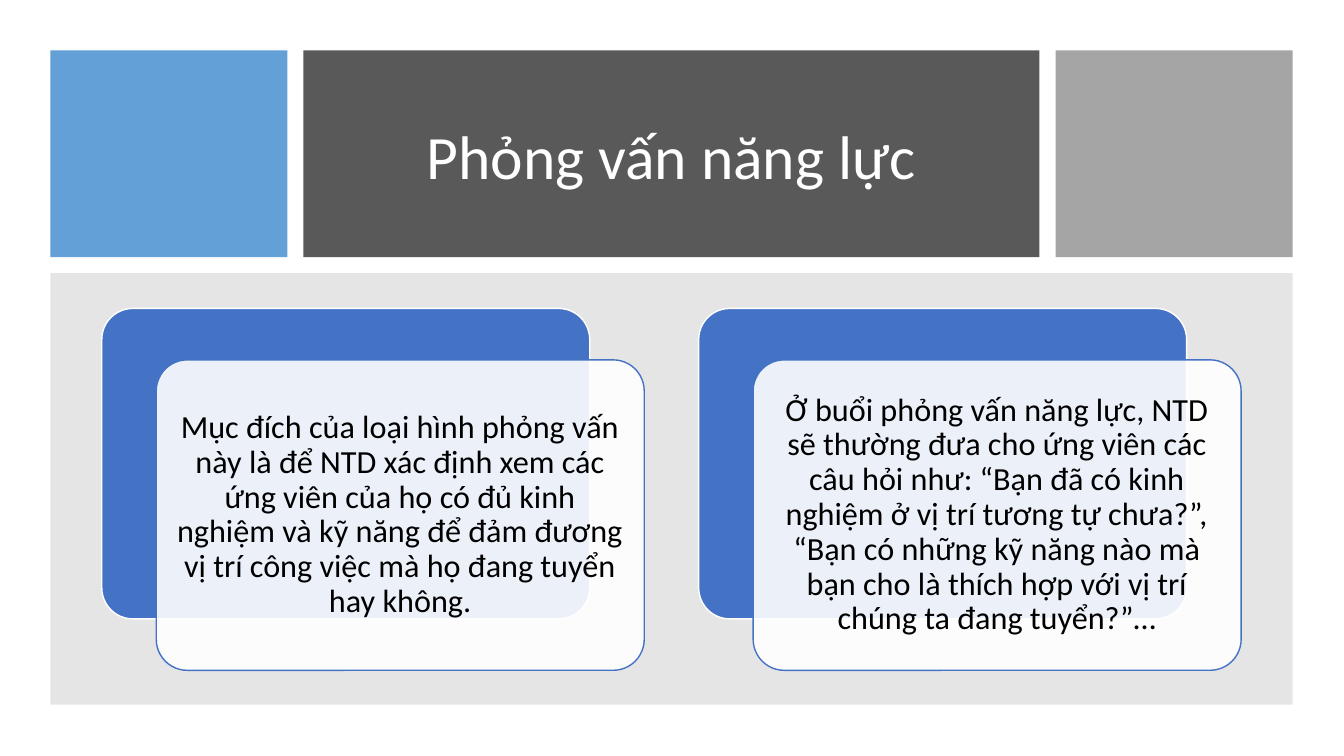
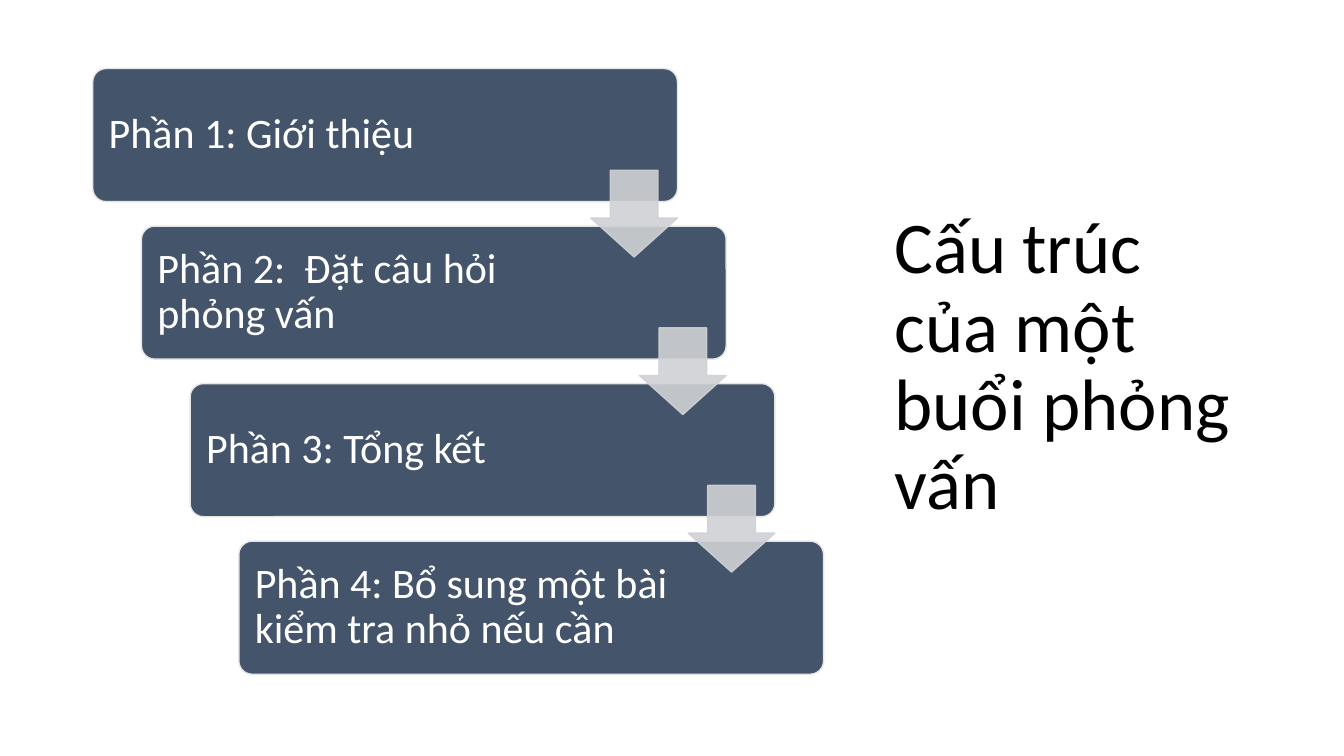
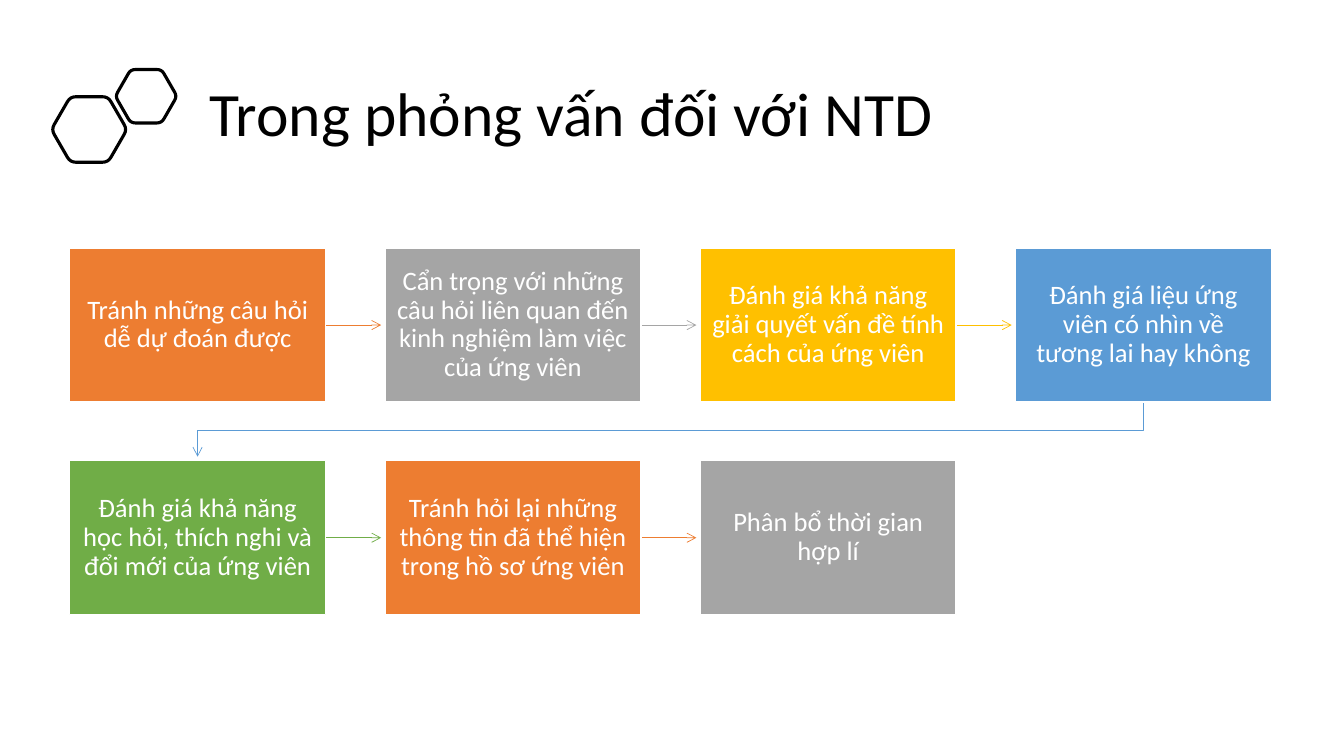
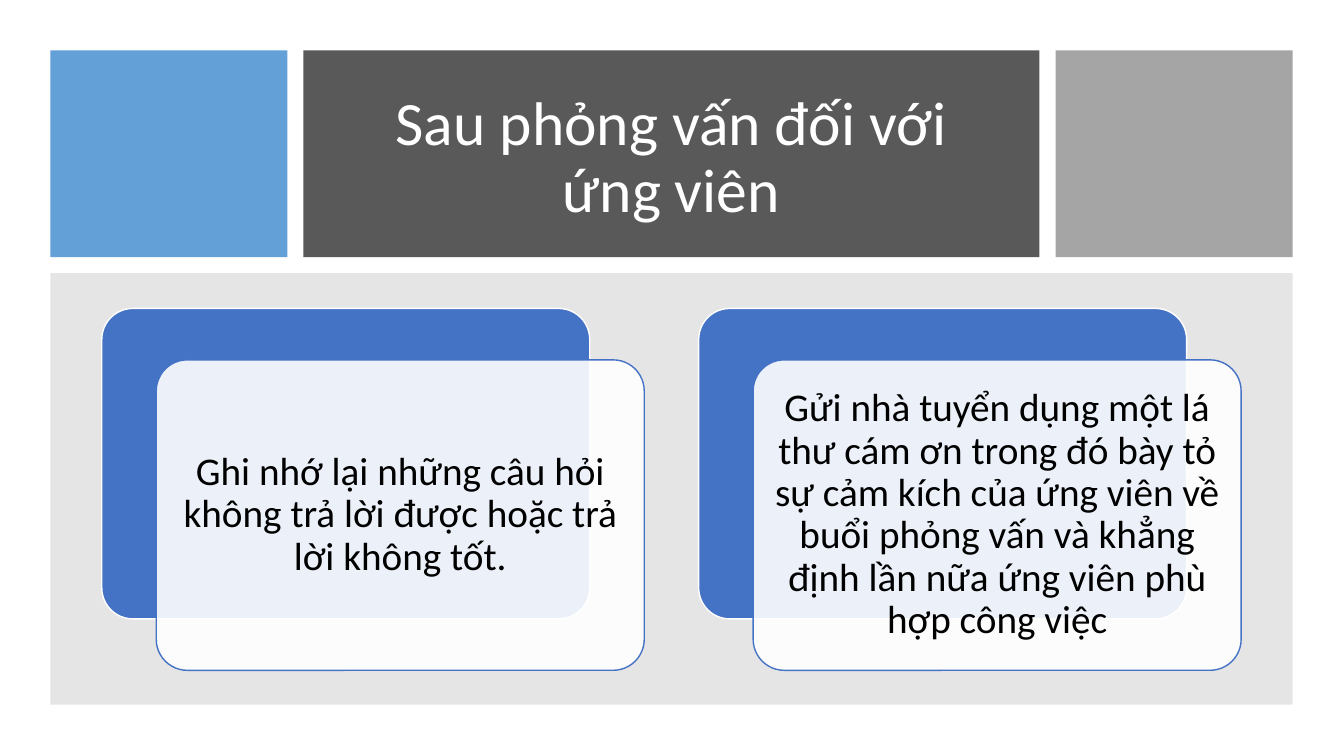
import math

import lxml.etree
import pptx
import pptx.dml.color
import pptx.enum.shapes
import pptx.enum.text
import pptx.oxml.ns
import pptx.util

Inches = pptx.util.Inches
Pt = pptx.util.Pt
RGBColor = pptx.dml.color.RGBColor
SHAPE = pptx.enum.shapes.MSO_SHAPE
ALIGN = pptx.enum.text.PP_ALIGN
qn = pptx.oxml.ns.qn

# Shared look
FONT = "Calibri"
BLACK = RGBColor(0x00, 0x00, 0x00)
WHITE = RGBColor(0xFF, 0xFF, 0xFF)
CHARCOAL = RGBColor(0x59, 0x59, 0x59)
MID_GRAY = RGBColor(0x80, 0x80, 0x80)
GRAY = RGBColor(0xA5, 0xA5, 0xA5)
SKY = RGBColor(0x5B, 0x9B, 0xD5)
BLUE = RGBColor(0x44, 0x72, 0xC4)
SLATE = RGBColor(0x44, 0x54, 0x6A)
PALE = RGBColor(0xE7, 0xE6, 0xE6)
SILVER = RGBColor(0xCF, 0xD1, 0xD4)
ORANGE = RGBColor(0xED, 0x7D, 0x31)
GOLD = RGBColor(0xFF, 0xC0, 0x00)
GREEN = RGBColor(0x70, 0xAD, 0x47)


# Helpers
def set_alpha(parent, percent):
    """Make the solid fill held by a shape's or line's properties translucent."""
    color = parent.find(qn("a:solidFill")).find(qn("a:srgbClr"))
    lxml.etree.SubElement(color, qn("a:alpha"), val=str(percent * 1000))


def add_arrowhead(line_shape):
    outline = line_shape.line
    outline.width = Pt(0.5)
    properties = line_shape.element.spPr.find(qn("a:ln"))
    lxml.etree.SubElement(properties, qn("a:tailEnd"), type="arrow")


def write(shape, text, size, color, align, insets):
    """Fill a shape with one paragraph; insets are left, top, right, bottom."""
    frame = shape.text_frame
    frame.word_wrap = True
    frame.auto_size = pptx.enum.text.MSO_AUTO_SIZE.NONE
    frame.vertical_anchor = pptx.enum.text.MSO_ANCHOR.MIDDLE
    (frame.margin_left, frame.margin_top,
     frame.margin_right, frame.margin_bottom) = map(Inches, insets)
    para = frame.paragraphs[0]
    para.alignment = align
    para.line_spacing = 0.9
    span = para.add_run()
    span.text = text
    span.font.name = FONT
    span.font.size = Pt(size)
    span.font.color.rgb = color


def add_box(page, kind, at, fill, line=None, alpha=None, adjust=()):
    box = page.shapes.add_shape(kind, *map(Inches, at))
    box.shadow.inherit = False
    box.fill.solid()
    box.fill.fore_color.rgb = fill
    if alpha:
        set_alpha(box.element.spPr, alpha)
    if line is None:
        box.line.fill.background()
    else:
        box.line.color.rgb = line
        box.line.width = Pt(1)
    for index, value in enumerate(adjust):
        box.adjustments[index] = value
    return box


def add_outline(page, points, color, close):
    start, *others = [(Inches(x), Inches(y)) for x, y in points]
    builder = page.shapes.build_freeform(*start, scale=1.0)
    builder.add_line_segments(others, close=close)
    outline = builder.convert_to_shape()
    outline.shadow.inherit = False
    outline.fill.background()
    outline.line.color.rgb = color
    return outline


def add_arrow(page, x, y, length, color):
    arrow = page.shapes.add_connector(
        pptx.enum.shapes.MSO_CONNECTOR.STRAIGHT,
        Inches(x), Inches(y), Inches(x + length), Inches(y))
    arrow.line.color.rgb = color
    add_arrowhead(arrow)
    lxml.etree.SubElement(arrow.element.spPr, qn("a:effectLst"))


def add_hexagon(page, center_x, center_y, radius):
    """Draw a regular hexagon whose corners are rounded."""
    corners = [(center_x + radius * math.cos(math.radians(60 * step)),
                center_y + radius * math.sin(math.radians(60 * step)))
               for step in range(6)]
    cut = 0.15
    points = []
    for index, corner in enumerate(corners):
        before, after = corners[index - 1], corners[(index + 1) % 6]
        for t in (0, 0.25, 0.5, 0.75, 1):
            pull_back, pull_on = cut * (1 - t) ** 2, cut * t ** 2
            points.append(tuple(
                c + pull_back * (b - c) + pull_on * (a - c)
                for c, b, a in zip(corner, before, after)))
    add_outline(page, points, BLACK, close=True).line.width = Pt(2.25)


def add_page(deck):
    return deck.slides.add_slide(deck.slide_layouts[5])


def set_title(page, text, at, size=44, color=BLACK, align=ALIGN.LEFT):
    title = page.shapes.title
    title.left, title.top, title.width, title.height = map(Inches, at)
    write(title, text, size, color, align, (0.1, 0.05, 0.1, 0.05))
    # Bring the title in front of any band drawn before it
    title.element.getparent().append(title.element)


# Slides
def cards_page(deck, title, texts, size, inset):
    page = add_page(deck)
    add_box(page, SHAPE.RECTANGLE, (0.5, 0.5, 2.35, 2.05), SKY, alpha=95)
    add_box(page, SHAPE.RECTANGLE, (3.01, 0.5, 7.3, 2.05), CHARCOAL)
    set_title(page, title, (3.33, 0.8, 6.66, 1.56), color=WHITE,
              align=ALIGN.CENTER)
    add_box(page, SHAPE.RECTANGLE, (10.47, 0.5, 2.35, 2.05), GRAY)
    add_box(page, SHAPE.RECTANGLE, (0.5, 2.71, 12.32, 4.28), MID_GRAY, alpha=20)
    for index, text in enumerate(texts):
        left = 1.01 + index * 5.92
        add_box(page, SHAPE.ROUNDED_RECTANGLE, (left, 3.06, 4.84, 3.08),
                BLUE, WHITE, adjust=(0.1,))
        card = add_box(page, SHAPE.ROUNDED_RECTANGLE,
                       (left + 0.54, 3.57, 4.84, 3.08),
                       WHITE, BLUE, alpha=90, adjust=(0.1,))
        write(card, text, size, BLACK, ALIGN.CENTER, (inset,) * 4)


def stairs_page(deck, title, steps):
    page = add_page(deck)
    set_title(page, title, (8.77, 0.6, 3.65, 6.1), size=52)
    step_x, step_y = 0.483, 1.563
    for index, text in enumerate(steps):
        step = add_box(page, SHAPE.ROUNDED_RECTANGLE,
                       (0.92 + index * step_x, 0.68 + index * step_y, 5.8, 1.32),
                       SLATE, PALE, adjust=(0.1,))
        write(step, text, 30, WHITE, ALIGN.LEFT, (0.12, 0.12, 1.46, 0.12))
    for index in range(len(steps) - 1):
        arrow = add_box(page, SHAPE.DOWN_ARROW,
                        (5.86 + index * step_x, 1.69 + index * step_y, 0.86, 0.86),
                        SILVER, SILVER, alpha=90, adjust=(0.55, 0.45))
        set_alpha(arrow.element.spPr.find(qn("a:ln")), 90)


def flow_page(deck, title, tasks):
    page = add_page(deck)
    set_title(page, title, (1.98, 0.57, 10.81, 1.17))
    add_hexagon(page, 0.885, 1.285, 0.375)
    add_hexagon(page, 1.45, 0.955, 0.306)
    columns, width, height = 4, 2.54, 1.53
    first_left, first_top, pitch_x, pitch_y = 0.69, 2.46, 3.127, 2.11
    for index, (text, color) in enumerate(tasks):
        row, column = divmod(index, columns)
        left, top = first_left + column * pitch_x, first_top + row * pitch_y
        if column == columns - 1:
            # Lead from the end of this row to the start of the next
            start_x, end_x = left + width / 2, first_left + width / 2
            bottom = top + height
            turn = add_outline(
                page, [(start_x, bottom), (start_x, bottom + 0.28),
                       (end_x, bottom + 0.28), (end_x, bottom + 0.54)],
                color, close=False)
            add_arrowhead(turn)
        elif index < len(tasks) - 1:
            add_arrow(page, left + width, top + height / 2, 0.55, color)
        task = add_box(page, SHAPE.RECTANGLE, (left, top, width, height),
                       color, WHITE)
        write(task, text, 19, WHITE, ALIGN.CENTER, (0.12, 0.13, 0.12, 0.13))


def main():
    deck = pptx.Presentation()
    deck.slide_width, deck.slide_height = Inches(13.33), Inches(7.5)

    cards_page(deck, "Phỏng vấn năng lực", [
        "Mục đích của loại hình phỏng vấn này là để NTD xác định xem các ứng "
        "viên của họ có đủ kinh nghiệm và kỹ năng để đảm đương vị trí công "
        "việc mà họ đang tuyển hay không.",
        "Ở buổi phỏng vấn năng lực, NTD sẽ thường đưa cho ứng viên các câu hỏi "
        "như: “Bạn đã có kinh nghiệm ở vị trí tương tự chưa?”, “Bạn có những "
        "kỹ năng nào mà bạn cho là thích hợp với vị trí chúng ta đang tuyển?”…",
    ], size=23, inset=0.1)

    stairs_page(deck, "Cấu trúc của một buổi phỏng vấn", [
        "Phần 1: Giới thiệu",
        "Phần 2:  Đặt câu hỏi phỏng vấn",
        "Phần 3: Tổng kết",
        "Phần 4: Bổ sung một bài kiểm tra nhỏ nếu cần",
    ])

    flow_page(deck, "Trong phỏng vấn đối với NTD", [
        ("Tránh những câu hỏi dễ dự đoán được", ORANGE),
        ("Cẩn trọng với những câu hỏi liên quan đến kinh nghiệm làm việc của "
         "ứng viên", GRAY),
        ("Đánh giá khả năng giải quyết vấn đề tính cách của ứng viên", GOLD),
        ("Đánh giá liệu ứng viên có nhìn về tương lai hay không", SKY),
        ("Đánh giá khả năng học hỏi, thích nghi và đổi mới của ứng viên", GREEN),
        ("Tránh hỏi lại những thông tin đã thể hiện trong hồ sơ ứng viên", ORANGE),
        ("Phân bổ thời gian hợp lí", GRAY),
    ])

    cards_page(deck, "Sau phỏng vấn đối với ứng viên", [
        "Ghi nhớ lại những câu hỏi không trả lời được hoặc trả lời không tốt.",
        "Gửi nhà tuyển dụng một lá thư cám ơn trong đó bày tỏ sự cảm kích của "
        "ứng viên về buổi phỏng vấn và khẳng định lần nữa ứng viên phù hợp "
        "công việc",
    ], size=28, inset=0.12)

    deck.save("out.pptx")


if __name__ == "__main__":
    main()
